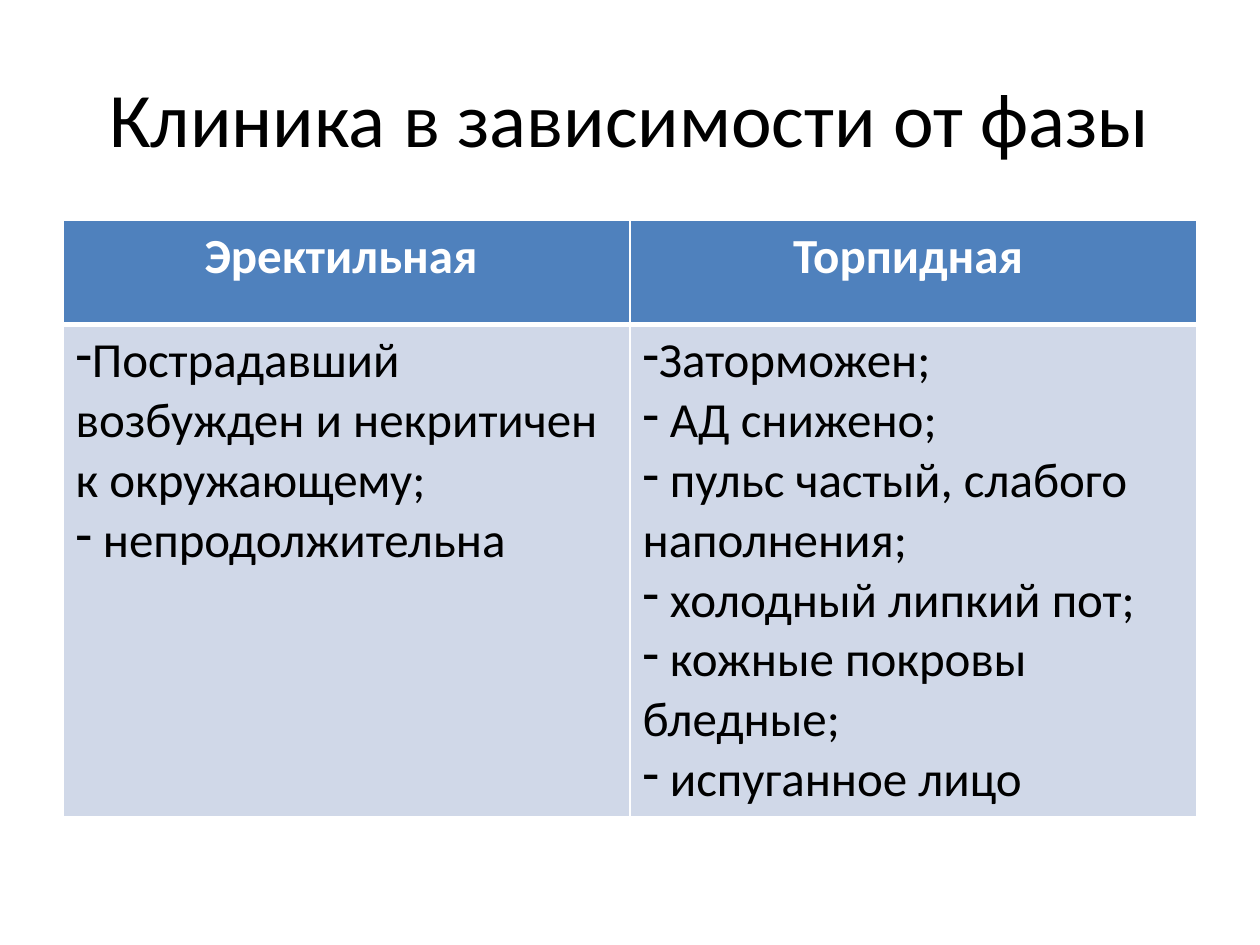
from dataclasses import dataclass

from lxml.etree import SubElement
from pptx import Presentation
from pptx.dml.color import RGBColor
from pptx.enum.text import MSO_ANCHOR, PP_ALIGN
from pptx.oxml.ns import qn
from pptx.util import Pt


@dataclass(frozen=True)
class Theme:
    font: str = "Calibri"
    title: int = 44
    body: int = 28
    black: str = "000000"
    white: str = "FFFFFF"
    head: str = "4F81BD"
    pale: str = "D0D8E8"


THEME = Theme()
LEFT, WIDTH = 36, 648
ROWS = (59.5, 281)
HEADS = ("Эректильная ", "Торпидная ")
SIGNS = (
    (
        "Пострадавший возбужден и некритичен к окружающему;",
        " непродолжительна",
    ),
    (
        "Заторможен;",
        " АД снижено;",
        " пульс частый, слабого наполнения;",
        " холодный липкий пот;",
        " кожные покровы бледные;",
        " испуганное лицо",
    ),
)


def style(para, size, color, bold=False, align=PP_ALIGN.LEFT):
    para.alignment = align
    for run in para.runs:
        font = run.font
        font.name = THEME.font
        font.size = Pt(size)
        font.bold = bold
        font.color.rgb = RGBColor.from_string(color)


def add_dash(para):
    props = para._p.get_or_add_pPr()
    props.set("marL", "0")
    props.set("indent", "0")
    SubElement(props, qn("a:buFontTx"))
    SubElement(props, qn("a:buChar"), char="-")


def add_edges(cell, top, bottom):
    # Edge lines come before the fill in the cell properties
    props = cell._tc.get_or_add_tcPr()
    widths = {"L": 1, "R": 1, "T": top, "B": bottom}
    for spot, (side, width) in enumerate(widths.items()):
        line = SubElement(props, qn(f"a:ln{side}"), w=str(Pt(width)))
        fill = SubElement(line, qn("a:solidFill"))
        SubElement(fill, qn("a:srgbClr"), val=THEME.white)
        props.insert(spot, line)


def paint(cell, color):
    cell.fill.solid()
    cell.fill.fore_color.rgb = RGBColor.from_string(color)


def add_title(slide, text):
    box = slide.shapes.add_textbox(Pt(LEFT), Pt(21.6), Pt(WIDTH), Pt(90))
    frame = box.text_frame
    frame.word_wrap = True
    frame.vertical_anchor = MSO_ANCHOR.MIDDLE
    frame.text = text
    style(frame.paragraphs[0], THEME.title, THEME.black, align=PP_ALIGN.CENTER)


def fill_head(cell, text):
    paint(cell, THEME.head)
    add_edges(cell, 1, 3)
    cell.text_frame.text = text
    style(cell.text_frame.paragraphs[0], THEME.body, THEME.white, True,
          PP_ALIGN.CENTER)


def fill_list(cell, items):
    paint(cell, THEME.pale)
    add_edges(cell, 3, 1)
    cell.text_frame.text = "\n".join(items)
    for para in cell.text_frame.paragraphs:
        style(para, THEME.body, THEME.black)
        add_dash(para)


def add_phases(slide):
    frame = slide.shapes.add_table(len(ROWS), len(HEADS), Pt(LEFT), Pt(126),
                                   Pt(WIDTH), Pt(sum(ROWS)))
    table = frame.table
    for row, height in zip(table.rows, ROWS):
        row.height = Pt(height)
    for col, (head, items) in enumerate(zip(HEADS, SIGNS)):
        fill_head(table.cell(0, col), head)
        fill_list(table.cell(1, col), items)


def main():
    deck = Presentation()
    deck.slide_width, deck.slide_height = Pt(720), Pt(540)
    slide = deck.slides.add_slide(deck.slide_layouts[6])

    # Heading, then the two phases side by side
    add_title(slide, "Клиника в зависимости от фазы")
    add_phases(slide)
    deck.save("out.pptx")


if __name__ == "__main__":
    main()
